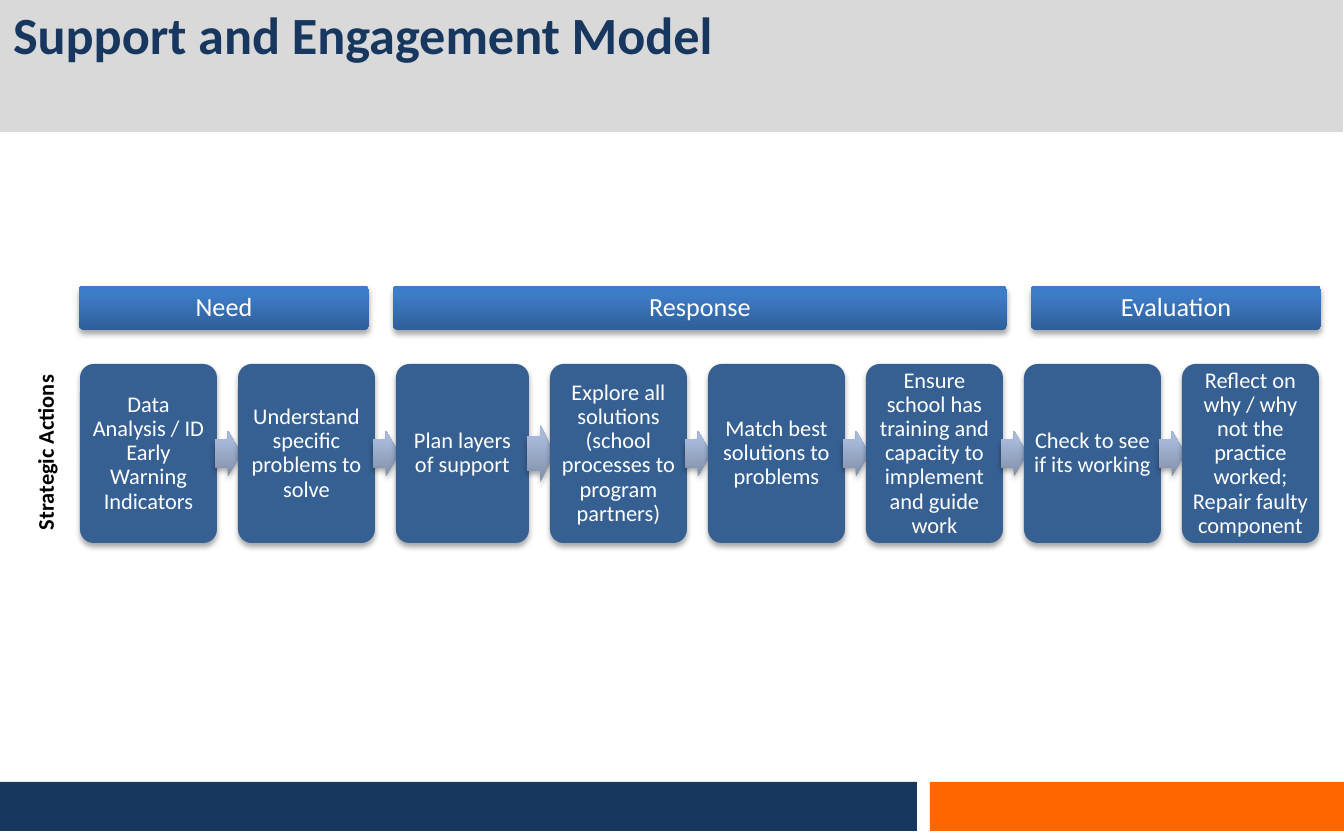
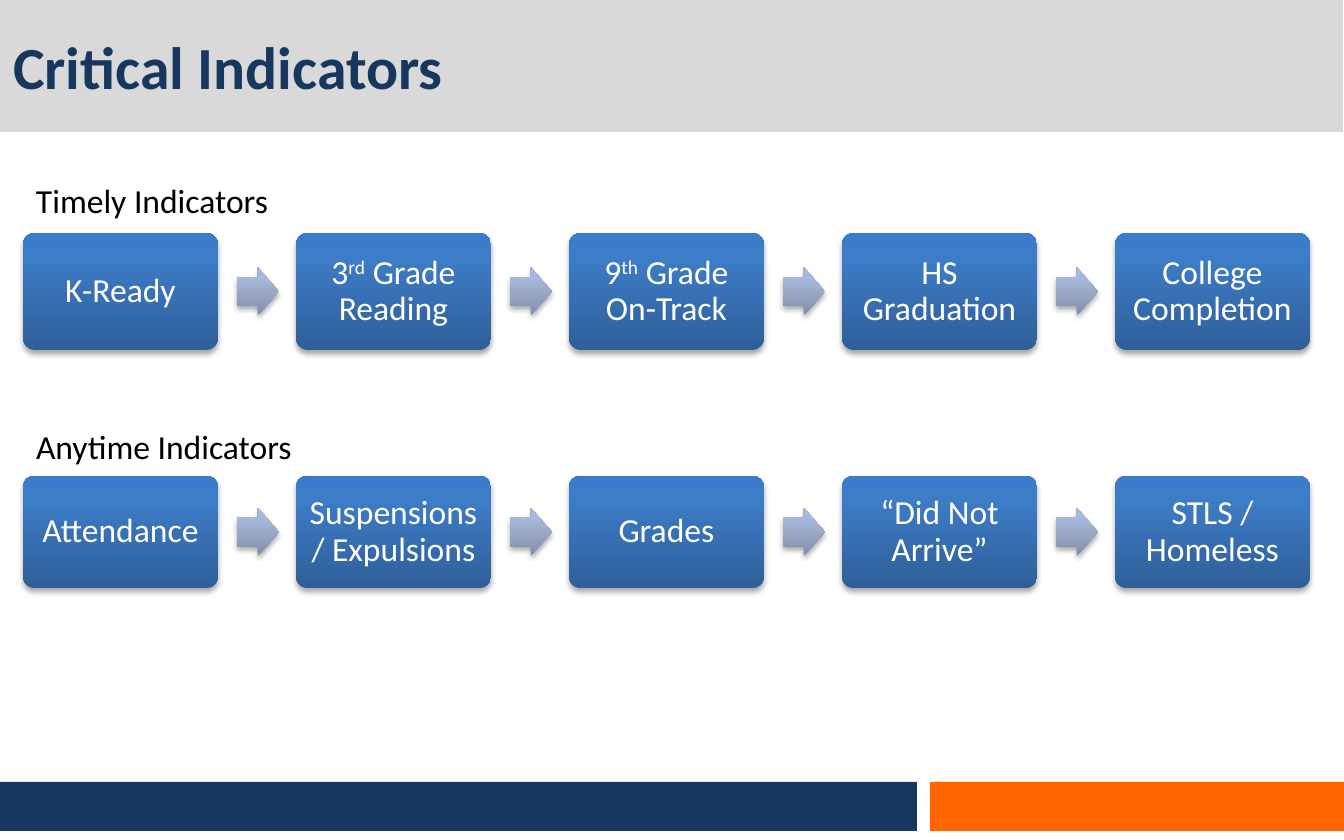
import copy

import pptx
import pptx.dml.color
import pptx.enum.shapes
import pptx.enum.text
import pptx.oxml
import pptx.oxml.ns
import pptx.util

EMU_PER_PX = 914400 / 134.4
FONT = "Calibri"
COLORS = {
    "band": "D9D9D9",
    "navy": "17375E",
    "orange": "FF6600",
    "step": "376092",
    "white": "FFFFFF",
    "black": "000000",
}
GRADIENTS = {
    "block": [(0, "2F5F99"), (0.8, "3D7CC7"), (1, "3A7CCB")],
    "arrow": [(0, "818FA8"), (0.8, "A7B9DA"), (1, "A7BADC")],
}
SHADOW_XML = (
    f'<a:outerShdw {pptx.oxml.ns.nsdecls("a")} blurRad="39370" dist="22860" '
    'dir="5400000" rotWithShape="0"><a:srgbClr val="000000">'
    '<a:alpha val="35000"/></a:srgbClr></a:outerShdw>'
)
SHAPE = pptx.enum.shapes.MSO_SHAPE
ALIGN = pptx.enum.text.PP_ALIGN
ANCHOR = pptx.enum.text.MSO_ANCHOR


def px(length):
    return pptx.util.Emu(round(length * EMU_PER_PX))


def rgb(hex_color):
    return pptx.dml.color.RGBColor.from_string(hex_color)


class Deck:
    def __init__(self, width, height):
        self.prs = pptx.Presentation()
        self.prs.slide_width, self.prs.slide_height = px(width), px(height)
        self.slide = None

    def new_slide(self, title, size, anchor=ANCHOR.MIDDLE, top_inset=7):
        self.slide = self.prs.slides.add_slide(self.prs.slide_layouts[5])
        heading = self.slide.shapes.title
        heading.left, heading.top, heading.width, heading.height = map(px, (0, 0, 1064, 132))
        self.set_text(heading.text_frame, title, size, "navy", bold=True, align=ALIGN.LEFT,
                      anchor=anchor, insets=(13, top_inset))

    def master_band(self, box, color):
        """Draw a plain band and move it to the back of the slide master."""
        band = self.shape(SHAPE.RECTANGLE, box, color, shadow=False)
        self.prs.slide_master.shapes._spTree.insert(2, band._element)

    def set_text(self, frame, text, size, color, bold=False, align=ALIGN.CENTER,
                 anchor=ANCHOR.MIDDLE, insets=(13, 7), spacing=None, wrap=True):
        """Fill a text frame; in a tuple of runs every second one is superscript."""
        frame.word_wrap = wrap
        frame.auto_size = pptx.enum.text.MSO_AUTO_SIZE.NONE
        frame.vertical_anchor = anchor
        frame.margin_left = frame.margin_right = px(insets[0])
        frame.margin_top = frame.margin_bottom = px(insets[1])
        paragraph = frame.paragraphs[0]
        paragraph.alignment = align
        paragraph.line_spacing = spacing
        for index, part in enumerate((text,) if isinstance(text, str) else text):
            run = paragraph.add_run()
            run.text = part
            run.font.name, run.font.size, run.font.bold = FONT, pptx.util.Pt(size), bold
            run.font.color.rgb = rgb(COLORS[color])
            if index % 2:
                run.font._element.set("baseline", "30000")

    def shape(self, kind, box, fill, adjustments=(), shadow=True):
        shape = self.slide.shapes.add_shape(kind, *map(px, box))
        for index, value in enumerate(adjustments):
            shape.adjustments[index] = value
        if fill in GRADIENTS:
            self.fill_gradient(shape, GRADIENTS[fill])
        else:
            shape.fill.solid()
            shape.fill.fore_color.rgb = rgb(COLORS[fill])
        shape.line.fill.background()
        shape.shadow.inherit = False
        if shadow:
            effects = shape._element.spPr.find(pptx.oxml.ns.qn("a:effectLst"))
            effects.append(pptx.oxml.parse_xml(SHADOW_XML))
        return shape

    def fill_gradient(self, shape, stops):
        shape.fill.gradient()
        shape.fill.gradient_angle = 90
        stop_list = shape._element.spPr.find(".//" + pptx.oxml.ns.qn("a:gsLst"))
        stop_list.insert(1, copy.deepcopy(stop_list[0]))
        for stop, (position, color) in zip(shape.fill.gradient_stops, stops):
            stop.position = position
            stop.color.rgb = rgb(color)

    def block(self, box, text, size, fill="block", insets=(9, 9)):
        block = self.shape(SHAPE.ROUNDED_RECTANGLE, box, fill, [0.1])
        self.set_text(block.text_frame, text, size, "white", insets=insets, spacing=0.9)

    def arrow(self, left, middle, width, height):
        self.shape(SHAPE.RIGHT_ARROW, (left, middle - height / 2, width, height),
                   "arrow", [0.6, 0.5])

    def label(self, box, text, size, rotation=0, **style):
        label = self.slide.shapes.add_textbox(*map(px, box))
        label.rotation = rotation
        self.set_text(label.text_frame, text, size, "black", wrap=False,
                      anchor=ANCHOR.TOP, **style)


PHASES = [("Need", 290), ("Response", 614), ("Evaluation", 290)]
PHASE_GAP = 24

# Action, box width, side inset, size of the arrow that follows
ACTIONS = [
    ("Data Analysis / ID Early Warning Indicators", 137, 7, (26, 46)),
    ("Understand specific problems to solve", 137, 7, (26, 46)),
    ("Plan layers of support", 133, 7, (27, 57)),
    ("Explore all solutions (school processes to program partners)", 137, 7, (26, 46)),
    ("Match best solutions to problems", 137, 7, (26, 46)),
    ("Ensure school has training and capacity to implement and guide work", 137, 7, (26, 46)),
    ("Check to see if its working", 137, 0, (26, 46)),
    ("Reflect on why / why not the practice worked; Repair faulty component", 137, 0, None),
]
ACTION_GAP, ACTION_TOP, ACTION_HEIGHT = 21, 364, 179

# Heading, its top and width, row top and height, indicators
INDICATOR_ROWS = [
    ("Timely Indicators", 173, 280, 233, 117,
     ["K-Ready", ("3", "rd", " Grade Reading"), ("9", "th", " Grade On-Track"),
      "HS Graduation", "College Completion"]),
    ("Anytime Indicators", 419, 302, 476, 112,
     ["Attendance", "Suspensions / Expulsions", "Grades", "“Did Not Arrive”",
      "STLS / Homeless"]),
]
INDICATOR_LEFT, INDICATOR_WIDTH, INDICATOR_PITCH = 23, 195, 273


def support_model(deck):
    deck.new_slide("Support and Engagement Model", 28, ANCHOR.TOP, 2)
    deck.label((-56, 439, 202, 27), "Strategic Actions", 12, rotation=270, bold=True,
               insets=(13, 0))
    left = 79
    for phase, width in PHASES:
        deck.block((left, 286, width, 44), phase, 14, insets=(8, 8))
        left += width + PHASE_GAP
    left = 80
    for action, width, side_inset, arrow_size in ACTIONS:
        deck.block((left, ACTION_TOP, width, ACTION_HEIGHT), action, 12, "step",
                   (side_inset, 7))
        if arrow_size:
            deck.arrow(left + width - 2, ACTION_TOP + ACTION_HEIGHT / 2, *arrow_size)
        left += width + ACTION_GAP


def critical_indicators(deck):
    deck.new_slide("Critical Indicators", 32)
    for heading, heading_top, heading_width, top, height, indicators in INDICATOR_ROWS:
        for column, indicator in enumerate(indicators):
            left = INDICATOR_LEFT + column * INDICATOR_PITCH
            if column:
                deck.arrow(left - 59, top + height / 2, 42, 48)
            deck.block((left, top, INDICATOR_WIDTH, height), indicator, 18)
        deck.label((INDICATOR_LEFT, heading_top, heading_width, 54), heading, 18,
                   align=ALIGN.LEFT)


def main():
    deck = Deck(1344, 840)
    support_model(deck)
    deck.master_band((0, 0, 1343, 132), "band")
    deck.master_band((0, 782, 917, 49), "navy")
    deck.master_band((930, 782, 414, 49), "orange")
    critical_indicators(deck)
    deck.prs.save("out.pptx")


if __name__ == "__main__":
    main()
